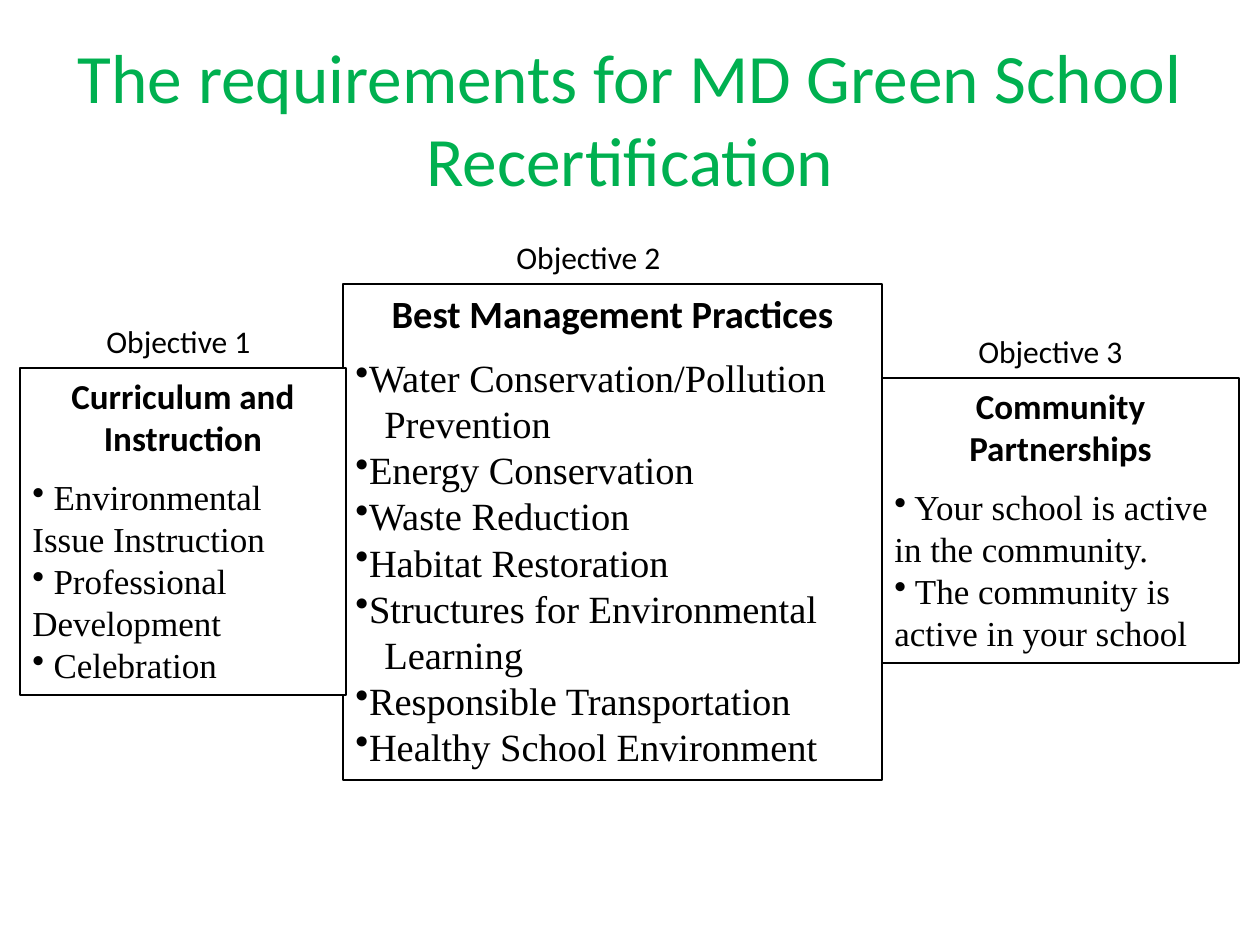
from lxml.etree import SubElement
from pptx import Presentation
from pptx.dml.color import RGBColor
from pptx.enum.shapes import MSO_SHAPE
from pptx.enum.text import MSO_ANCHOR, PP_ALIGN
from pptx.oxml.ns import qn
from pptx.util import Emu, Pt

PX = 914400 // 126
HEADING_FONT, LIST_FONT = "Calibri", "Times New Roman"
BLACK, WHITE, GREEN = "000000", "FFFFFF", "00B050"
CONTINUED_INDENT = 29

# left, top, width, height, text size, heading, items;
# a line break in an item starts an indented continuation line
BOXES = [
    (343, 284, 539, 496, 22, "Best Management Practices", [
        "Water Conservation/Pollution\nPrevention",
        "Energy Conservation",
        "Waste Reduction",
        "Habitat Restoration",
        "Structures for Environmental\nLearning",
        "Responsible Transportation",
        "Healthy School Environment",
    ]),
    (882, 378, 357, 285, 20, "Community Partnerships", [
        " Your school is active in the community.",
        " The community is active in your school",
    ]),
    (20, 368, 326, 327, 20, "Curriculum and Instruction", [
        " Environmental Issue Instruction",
        " Professional Development",
        " Celebration",
    ]),
]

OBJECTIVES = [("Objective 1", 94, 315), ("Objective 2", 504, 231), ("Objective 3", 966, 325)]


def px(*values):
    return [Emu(v * PX) for v in values]


def color(value):
    return RGBColor.from_string(value)


def style(p, text, size, font, fill=BLACK, bold=False, align=PP_ALIGN.LEFT):
    p.text = text
    p.alignment = align
    p.font.size = Pt(size)
    p.font.name = font
    p.font.bold = bold
    p.font.color.rgb = color(fill)


def add_text(s, box, text, size, **options):
    tf = s.shapes.add_textbox(*px(*box)).text_frame
    tf.word_wrap = True
    tf.vertical_anchor = MSO_ANCHOR.MIDDLE
    style(tf.paragraphs[0], text, size, HEADING_FONT, **options)


def add_item(tf, item, size):
    """Add a bulleted line, then its indented continuation lines."""
    first, *continued = item.split("\n")
    p = tf.add_paragraph()
    style(p, first, size, LIST_FONT)
    SubElement(p._p.get_or_add_pPr(), qn("a:buChar")).set("char", "•")
    for line in continued:
        p = tf.add_paragraph()
        style(p, line, size, LIST_FONT)
        p._p.get_or_add_pPr().set("marL", str(CONTINUED_INDENT * PX))


def add_list_box(s, box, size, heading, items):
    sp = s.shapes.add_shape(MSO_SHAPE.RECTANGLE, *px(*box))
    sp.shadow.inherit = False
    sp.fill.solid()
    sp.fill.fore_color.rgb = color(WHITE)
    sp.line.color.rgb = color(BLACK)
    sp.line.width = Pt(0.75)
    tf = sp.text_frame
    tf.word_wrap = True
    tf.vertical_anchor = MSO_ANCHOR.TOP
    p = tf.paragraphs[0]
    style(p, heading, size, HEADING_FONT, bold=True, align=PP_ALIGN.CENTER)
    p.space_after = Pt(10)
    for item in items:
        add_item(tf, item, size)


def main():
    prs = Presentation()
    prs.slide_width, prs.slide_height = px(1260, 945)
    s = prs.slides.add_slide(prs.slide_layouts[6])
    add_text(s, (63, 38, 1134, 158), "The requirements for MD Green School Recertification",
             39.6, fill=GREEN, align=PP_ALIGN.CENTER)
    for *box, size, heading, items in BOXES:
        add_list_box(s, box, size, heading, items)
    for text, left, top in OBJECTIVES:
        add_text(s, (left, top, 231, 51), text, 18)
    prs.save("out.pptx")


if __name__ == "__main__":
    main()
